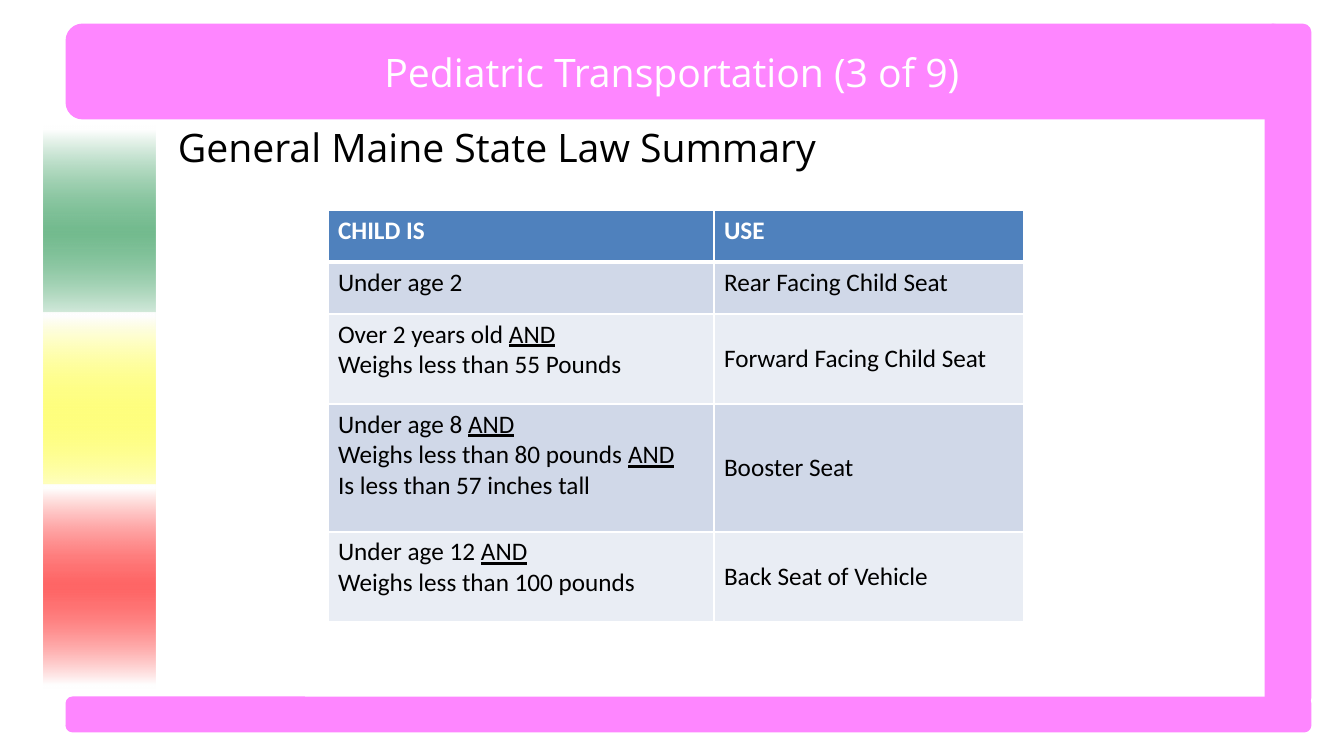
from lxml import etree
from pptx import Presentation
from pptx.dml.color import RGBColor
from pptx.enum.shapes import MSO_SHAPE
from pptx.enum.text import MSO_ANCHOR, PP_ALIGN
from pptx.oxml import parse_xml
from pptx.oxml.ns import nsdecls
from pptx.util import Emu, Pt

ROUNDED, RECTANGLE = MSO_SHAPE.ROUNDED_RECTANGLE, MSO_SHAPE.RECTANGLE
TOP, MIDDLE = MSO_ANCHOR.TOP, MSO_ANCHOR.MIDDLE
LEFT, CENTER = PP_ALIGN.LEFT, PP_ALIGN.CENTER

WHITE = RGBColor(0xFF, 0xFF, 0xFF)
BLACK = RGBColor(0x00, 0x00, 0x00)
PINK = RGBColor(0xFE, 0x86, 0xFF)
GREEN = RGBColor(0x17, 0x8E, 0x44)
YELLOW = RGBColor(0xFF, 0xFF, 0x00)
RED = RGBColor(0xFF, 0x00, 0x00)
HEADER_BLUE = RGBColor(0x4F, 0x81, 0xBD)
BAND_DARK = RGBColor(0xD0, 0xD8, 0xE8)
BAND_LIGHT = RGBColor(0xE9, 0xED, 0xF4)

# Content
TITLE = "Pediatric Transportation (3 of 9)"
SUBTITLE = "General Maine State Law Summary"
JOINER = "AND"  # underlined at the end of a line
LAW_ROWS = [  # height in px, lines about the child, seat to use, seat anchor
    (52, ["CHILD IS"], "USE", TOP),
    (52, ["Under age 2"], "Rear Facing Child Seat", TOP),
    (90, ["Over 2 years old AND", "Weighs less than 55 Pounds"],
     "Forward Facing Child Seat", MIDDLE),
    (128, ["Under age 8 AND", "Weighs less than 80 pounds AND",
           "Is less than 57 inches tall"], "Booster Seat", MIDDLE),
    (90, ["Under age 12 AND", "Weighs less than 100 pounds"],
     "Back Seat of Vehicle", MIDDLE),
]

# Layout in px
FRAME_BARS = [(67, 25, 1221, 93), (1266, 25, 44, 680), (67, 698, 1243, 33)]
LIGHT_LEFT, LIGHT_WIDTH = 44, 112
LIGHTS = [(126, 212, GREEN, 60), (313, 204, YELLOW, 50), (485, 204, RED, 60)]
TITLE_BOX = (319, 9, 706, 126)
SUBTITLE_BOX = (168, 118, 1075, 64)
TABLE_LEFT, TABLE_TOP = 328, 210
COLUMN_WIDTHS = (386, 310)


def px(length):
    return Emu(round(length * 914400 / 100.8))


def add_plain_shape(page, preset, bounds):
    shape = page.shapes.add_shape(preset, *map(px, bounds))
    shape.shadow.inherit = False
    return shape


def add_frame_bar(page, bounds):
    bar = add_plain_shape(page, ROUNDED, bounds)
    bar.fill.solid()
    bar.fill.fore_color.rgb = PINK
    bar.line.color.rgb = PINK
    bar.line.width = Pt(2)


def add_light(page, top, height, color, opacity):
    light = add_plain_shape(page, RECTANGLE, (LIGHT_LEFT, top, LIGHT_WIDTH, height))
    light.line.fill.background()
    stops = "".join(
        f'<a:gs pos="{position * 1000}"><a:srgbClr val="{stop_color}">'
        f'<a:alpha val="{alpha * 1000}"/></a:srgbClr></a:gs>'
        for position, stop_color, alpha in
        [(2, WHITE, 100), (50, color, opacity), (98, WHITE, 100)])
    gradient = parse_xml(
        f'<a:gradFill {nsdecls("a")} rotWithShape="1"><a:gsLst>{stops}</a:gsLst>'
        '<a:lin ang="5400000" scaled="0"/></a:gradFill>')
    light._element.spPr.find("{*}prstGeom").addnext(gradient)


def add_span(para, text, font_name, size, color, bold=False, underline=False):
    span = para.add_run()
    span.text = text
    span.font.name = font_name
    span.font.size = Pt(size)
    span.font.color.rgb = color
    span.font.bold = bold
    span.font.underline = underline


def add_heading(page, bounds, text, color, align, anchor):
    box = page.shapes.add_textbox(*map(px, bounds))
    frame = box.text_frame
    frame.word_wrap = True
    frame.vertical_anchor = anchor
    para = frame.paragraphs[0]
    para.alignment = align
    add_span(para, text, "Open Sans", 28, color)


def set_borders(cell, widths):
    properties = cell._tc.get_or_add_tcPr()
    for index, (side, width) in enumerate(zip("LRTB", widths)):
        border = parse_xml(
            f'<a:ln{side} {nsdecls("a")} w="{Pt(width)}"/>')
        fill = etree.SubElement(border, border.tag.replace(f"ln{side}", "solidFill"))
        etree.SubElement(fill, fill.tag.replace("solidFill", "srgbClr"), val=str(WHITE))
        properties.insert(index, border)


def fill_cell(cell, lines, row, anchor):
    header = row == 0
    cell.vertical_anchor = anchor
    cell.fill.solid()
    band = BAND_DARK if row % 2 else BAND_LIGHT
    cell.fill.fore_color.rgb = HEADER_BLUE if header else band
    set_borders(cell, (1, 1, 3 if row == 1 else 1, 3 if header else 1))
    color = WHITE if header else BLACK
    for index, line in enumerate(lines):
        frame = cell.text_frame
        para = frame.add_paragraph() if index else frame.paragraphs[0]
        lead = line.removesuffix(JOINER)
        add_span(para, lead, "Calibri", 18, color, header)
        if lead != line:
            add_span(para, JOINER, "Calibri", 18, color, header, True)


def add_law_table(page):
    heights = [row[0] for row in LAW_ROWS]
    table = page.shapes.add_table(
        len(LAW_ROWS), len(COLUMN_WIDTHS), px(TABLE_LEFT), px(TABLE_TOP),
        px(sum(COLUMN_WIDTHS)), px(sum(heights))).table
    for column, width in zip(table.columns, COLUMN_WIDTHS):
        column.width = px(width)
    for row, (height, child, seat, anchor) in enumerate(LAW_ROWS):
        table.rows[row].height = px(height)
        fill_cell(table.cell(row, 0), child, row, TOP)
        fill_cell(table.cell(row, 1), [seat], row, anchor)


def main():
    deck = Presentation()
    deck.slide_width, deck.slide_height = px(1344), px(756)
    page = deck.slides.add_slide(deck.slide_layouts[6])

    # Frame and traffic light
    for bounds in FRAME_BARS:
        add_frame_bar(page, bounds)
    for light in LIGHTS:
        add_light(page, *light)

    # Headings and table
    add_heading(page, TITLE_BOX, TITLE, WHITE, CENTER, MIDDLE)
    add_heading(page, SUBTITLE_BOX, SUBTITLE, BLACK, LEFT, TOP)
    add_law_table(page)
    deck.save("out.pptx")


if __name__ == "__main__":
    main()
